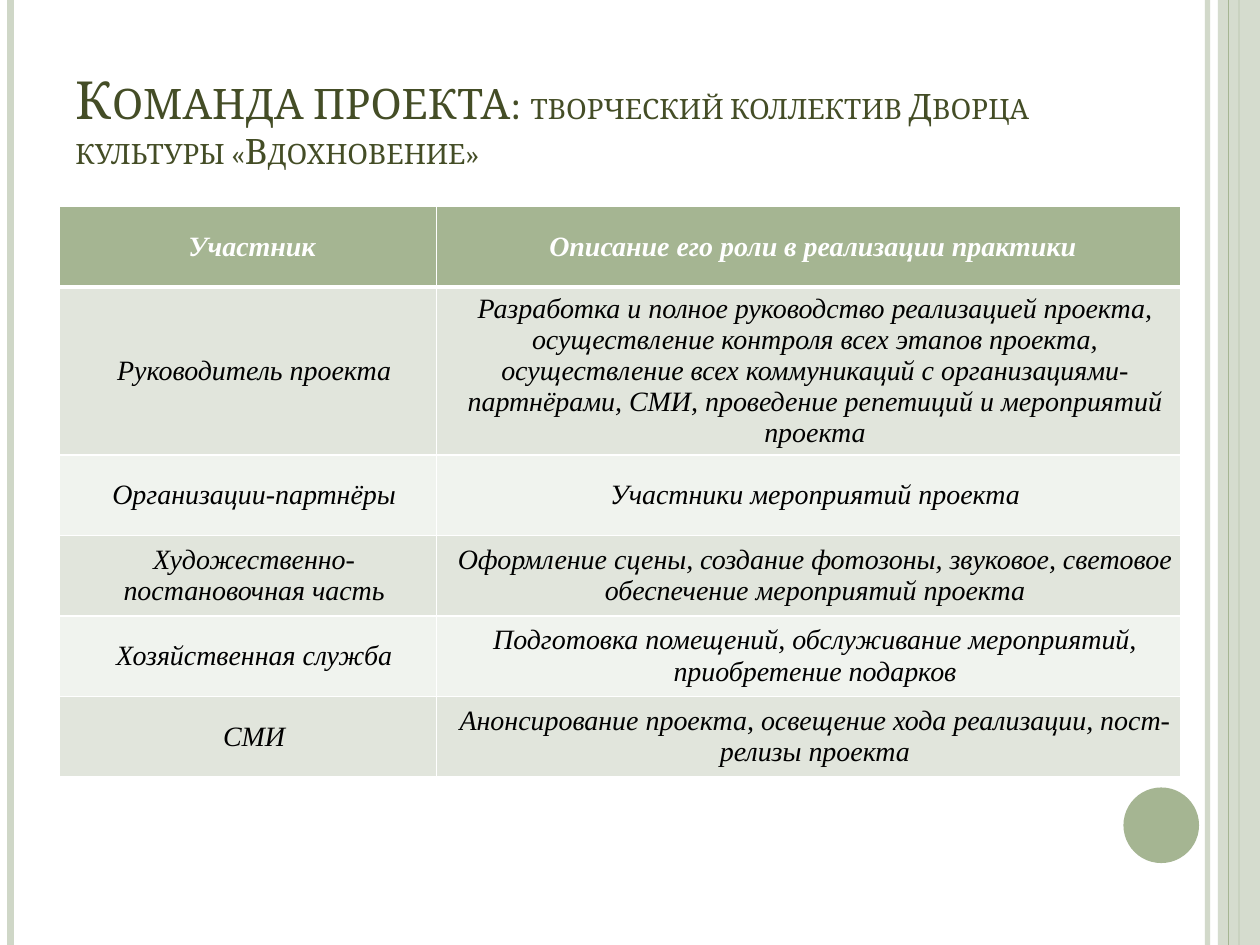
"""Build the project team slide: a title, a table of roles and side stripes."""
from lxml import etree
from pptx import Presentation
from pptx import util as u
from pptx.dml.color import RGBColor
from pptx.enum import shapes, text
from pptx.oxml.ns import qn

Pt = u.Pt
WHITE = RGBColor(0xFF, 0xFF, 0xFF)
BLACK = RGBColor(0, 0, 0)
GREEN = RGBColor(0xA5, 0xB5, 0x92)
PALE_GREEN = RGBColor(0xCF, 0xD7, 0xC7)
DARK_GREEN = RGBColor(0x44, 0x4D, 0x26)
BANDS = [RGBColor(0xE1, 0xE5, 0xDC), RGBColor(0xF0, 0xF3, 0xEE)]

WIDTH, HEIGHT = 720, 540
TITLE = [
    ("Команда проекта: ", 30),
    ("творческий коллектив Дворца культуры «Вдохновение»", 20),
]
ROLES = [
    ("Участник", "Описание его роли в реализации практики"),
    ("Руководитель проекта",
     "Разработка и полное руководство реализацией проекта, осуществление "
     "контроля всех этапов проекта, осуществление всех коммуникаций с "
     "организациями-партнёрами, СМИ, проведение репетиций и мероприятий проекта"),
    ("Организации-партнёры", "Участники мероприятий проекта"),
    ("Художественно-постановочная часть",
     "Оформление сцены, создание фотозоны, звуковое, световое обеспечение "
     "мероприятий проекта"),
    ("Хозяйственная служба",
     "Подготовка помещений, обслуживание мероприятий, приобретение подарков"),
    ("СМИ", "Анонсирование проекта, освещение хода реализации, пост-релизы проекта"),
]
COLUMN_WIDTHS = [215.5, 425.5]
ROW_HEIGHTS = [46, 67, 46, 46, 46, 46]
HEADER_INDENT, BODY_INDENT = 4.5, 7


def set_opacity(element, percent):
    color = element.find(".//" + qn("a:srgbClr"))
    etree.SubElement(color, qn("a:alpha"), val=str(percent * 1000))


def add_stripe(page, x, color, weight, opacity=100):
    line = page.shapes.add_connector(
        shapes.MSO_CONNECTOR.STRAIGHT, Pt(x), Pt(0), Pt(x), Pt(HEIGHT))
    line.line.color.rgb = color
    line.line.width = Pt(weight)
    properties = line._element.spPr
    etree.SubElement(properties, qn("a:effectLst"))
    if opacity < 100:
        set_opacity(properties, opacity)


def add_plain_shape(page, kind, color, left, top, width, height):
    shape = page.shapes.add_shape(kind, Pt(left), Pt(top), Pt(width), Pt(height))
    shape.shadow.inherit = False
    shape.fill.solid()
    shape.fill.fore_color.rgb = color
    shape.line.fill.background()
    return shape


def add_decoration(page):
    add_stripe(page, 690, PALE_GREEN, 3, 93)
    add_stripe(page, 6, PALE_GREEN, 4.5)
    add_stripe(page, 708, GREEN, 1.5)
    band = add_plain_shape(
        page, shapes.MSO_SHAPE.RECTANGLE, PALE_GREEN, 696, 0, WIDTH - 696, HEIGHT)
    set_opacity(band._element.spPr, 87)
    add_stripe(page, 702, GREEN, 0.75)
    add_plain_shape(page, shapes.MSO_SHAPE.OVAL, GREEN, 642, 450, 43.2, 43.2)


def add_title(page):
    box = page.shapes.add_textbox(Pt(36), Pt(21.6), Pt(616.5), Pt(80))
    frame = box.text_frame
    frame.word_wrap = True
    frame.vertical_anchor = text.MSO_ANCHOR.BOTTOM
    para = frame.paragraphs[0]
    for words, size in TITLE:
        span = para.add_run()
        span.text = words
        span.font.name = "Cambria"
        span.font.size = Pt(size)
        span.font.color.rgb = DARK_GREEN
        span.font._element.set("cap", "small")


def add_borders(cell, row):
    weights = {"lnL": 1, "lnR": 1, "lnT": 3 if row == 1 else 1, "lnB": 3 if row == 0 else 1}
    properties = cell._tc.get_or_add_tcPr()
    for side, weight in weights.items():
        border = etree.SubElement(properties, qn("a:" + side), w=str(Pt(weight)))
        fill = etree.SubElement(border, qn("a:solidFill"))
        etree.SubElement(fill, qn("a:srgbClr"), val=str(WHITE))


def fill_cell(cell, words, row):
    header = row == 0
    add_borders(cell, row)
    cell.fill.solid()
    cell.fill.fore_color.rgb = GREEN if header else BANDS[(row - 1) % 2]
    cell.margin_left = cell.margin_right = cell.margin_top = cell.margin_bottom = 0
    cell.vertical_anchor = text.MSO_ANCHOR.MIDDLE
    para = cell.text_frame.paragraphs[0]
    para.text = words
    para.alignment = text.PP_ALIGN.CENTER
    indent = HEADER_INDENT if header else BODY_INDENT
    para._p.get_or_add_pPr().set("marL", str(Pt(indent)))
    para.font.name = "Times New Roman"
    para.font.size = Pt(16)
    para.font.italic = True
    para.font.bold = header
    para.font.color.rgb = WHITE if header else BLACK


def add_roles(page):
    table = page.shapes.add_table(
        len(ROLES), len(COLUMN_WIDTHS), Pt(34), Pt(118),
        Pt(sum(COLUMN_WIDTHS)), Pt(sum(ROW_HEIGHTS))).table
    for column, width in zip(table.columns, COLUMN_WIDTHS):
        column.width = Pt(width)
    for row, (height, entries) in enumerate(zip(ROW_HEIGHTS, ROLES)):
        table.rows[row].height = Pt(height)
        for column, words in enumerate(entries):
            fill_cell(table.cell(row, column), words, row)


def main():
    deck = Presentation()
    deck.slide_width, deck.slide_height = Pt(WIDTH), Pt(HEIGHT)
    page = deck.slides.add_slide(deck.slide_layouts[6])
    add_decoration(page)
    add_title(page)
    add_roles(page)
    deck.save("out.pptx")


if __name__ == "__main__":
    main()
